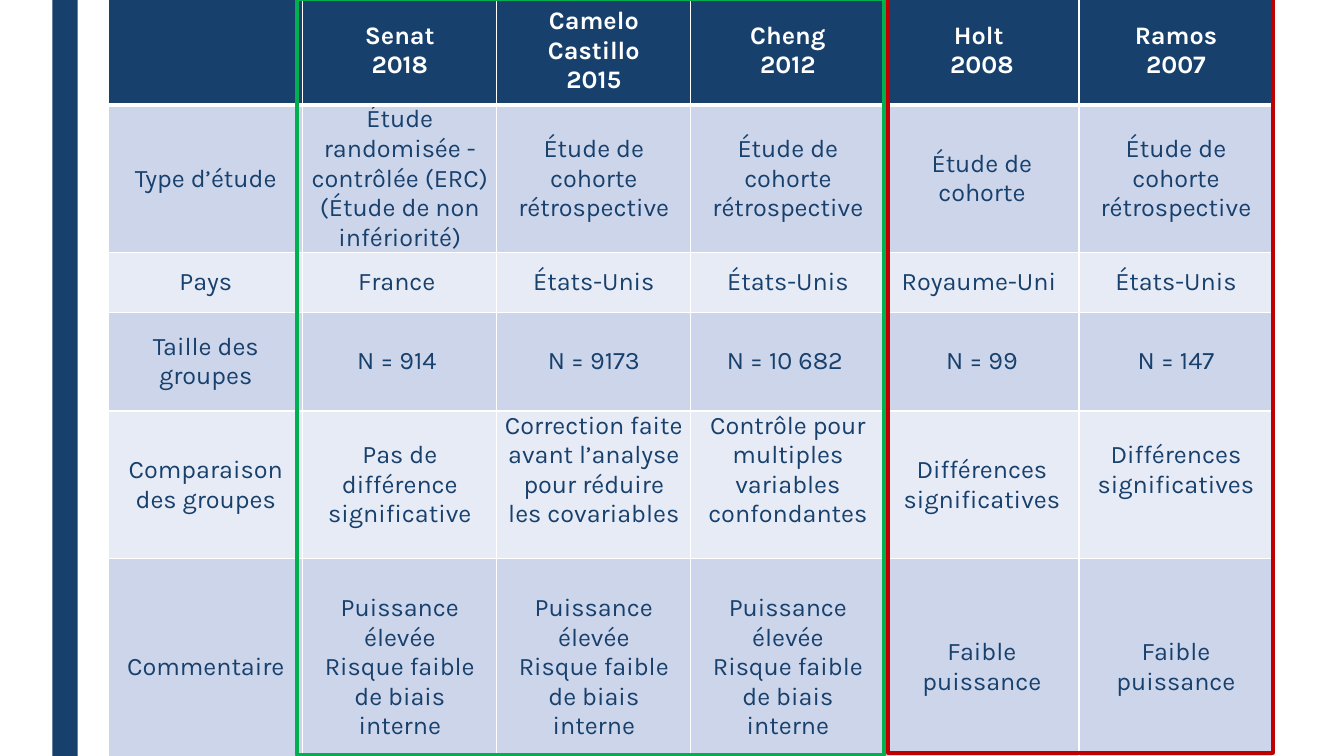
from lxml.etree import SubElement
from pptx import Presentation
from pptx.dml.color import RGBColor
from pptx.enum.shapes import MSO_SHAPE
from pptx.enum.text import MSO_ANCHOR, PP_ALIGN
from pptx.oxml.ns import qn
from pptx.util import Cm, Pt

NAVY = RGBColor(0x17, 0x40, 0x6D)
WHITE = RGBColor(0xFF, 0xFF, 0xFF)
BAND_DARK = RGBColor(0xCC, 0xD5, 0xEA)
BAND_LIGHT = RGBColor(0xE7, 0xEB, 0xF5)
GREEN = RGBColor(0x00, 0xB0, 0x50)
RED = RGBColor(0xC0, 0x00, 0x00)

COLUMN_WIDTH = 4.89
ROW_HEIGHTS = [2.72, 3.71, 1.5, 2.49, 3.71, 5]
COHORT = "Étude de cohorte rétrospective"
HIGH_POWER = "Puissance élevée\nRisque faible de biais interne"
LOW_POWER = "Faible puissance"
DIFFERENCES = "Différences significatives"
STUDIES = [
    ["", "Senat\n2018", "Camelo Castillo\n2015", "Cheng\n2012", "Holt \n2008", "Ramos\n2007"],
    ["Type d’étude",
     "Étude randomisée - contrôlée (ERC)\n(Étude de non infériorité)",
     COHORT, COHORT, "Étude de cohorte", COHORT],
    ["Pays", "France ", "États-Unis", "États-Unis", "Royaume-Uni ", "États-Unis"],
    ["Taille des groupes", "N = 914 ", "N = 9173", "N = 10 682 ", "N = 99", "N = 147"],
    ["Comparaison des groupes", "Pas de différence significative",
     "Correction faite avant l’analyse pour réduire les covariables",
     "Contrôle pour multiples variables confondantes", DIFFERENCES, DIFFERENCES],
    ["Commentaire", HIGH_POWER, HIGH_POWER, HIGH_POWER, LOW_POWER, LOW_POWER],
]
COMPARISON_ROW, COMMENT_ROW = 4, 5
RAISED_COLUMNS = (2, 3, 5)


def write_text(text_frame, text, size=18, color=NAVY, bold=False, font="Karla"):
    """Write each line of text as one centred paragraph."""
    text_frame.text = text
    for paragraph in text_frame.paragraphs:
        paragraph.alignment = PP_ALIGN.CENTER
        paragraph.font.name = font
        paragraph.font.size = Pt(size)
        paragraph.font.bold = bold
        paragraph.font.color.rgb = color
        for run in paragraph.runs:
            run.font.name = font
            run.font.size = Pt(size)
            run.font.bold = bold
            run.font.color.rgb = color


def set_margins(cell, side=0.18, top=0, bottom=0):
    cell.margin_left = cell.margin_right = Cm(side)
    cell.margin_top = Cm(top)
    cell.margin_bottom = Cm(bottom)


def add_cell_borders(cell, top=1, bottom=1):
    """Add white borders; must run before the fill, which follows them in the XML."""
    properties = cell._tc.get_or_add_tcPr()
    for side, width in (("L", 1), ("R", 1), ("T", top), ("B", bottom)):
        line = SubElement(properties, qn(f"a:ln{side}"), w=str(Pt(width)))
        fill = SubElement(line, qn("a:solidFill"))
        SubElement(fill, qn("a:srgbClr"), val=str(WHITE))


def add_rectangle(slide, left, top, width, height, fill=None, line=None):
    shape = slide.shapes.add_shape(
        MSO_SHAPE.RECTANGLE, Cm(left), Cm(top), Cm(width), Cm(height))
    shape.shadow.inherit = False
    if fill is None:
        shape.fill.background()
    else:
        shape.fill.solid()
        shape.fill.fore_color.rgb = fill
    if line is None:
        shape.line.fill.background()
    else:
        shape.line.color.rgb = line
        shape.line.width = Pt(2.75)


def format_cell(cell, text, row, column):
    header = row == 0
    cell.vertical_anchor = MSO_ANCHOR.MIDDLE
    if row == COMMENT_ROW:
        set_margins(cell, side=0.25, top=0.6, bottom=0.13)
    elif row == COMPARISON_ROW and column in RAISED_COLUMNS:
        set_margins(cell, bottom=0.74)
    else:
        set_margins(cell)
    add_cell_borders(cell, top=3 if row == 1 else 1, bottom=3 if header else 1)
    cell.fill.solid()
    cell.fill.fore_color.rgb = NAVY if header else BAND_DARK if row % 2 else BAND_LIGHT
    write_text(cell.text_frame, text, color=WHITE if header else NAVY, bold=header)


def add_study_table(slide, left, top):
    column_count = len(STUDIES[0])
    table = slide.shapes.add_table(
        len(STUDIES), column_count, Cm(left), Cm(top),
        Cm(COLUMN_WIDTH * column_count), Cm(sum(ROW_HEIGHTS))).table
    for column in table.columns:
        column.width = Cm(COLUMN_WIDTH)
    for row, texts in enumerate(STUDIES):
        table.rows[row].height = Cm(ROW_HEIGHTS[row])
        for column, text in enumerate(texts):
            format_cell(table.cell(row, column), text, row, column)


def main():
    presentation = Presentation()
    presentation.slide_width = Cm(33.87)
    presentation.slide_height = Cm(19.05)
    slide = presentation.slides.add_slide(presentation.slide_layouts[6])
    add_rectangle(slide, 1.32, 0, 0.64, 19.05, fill=NAVY)
    add_study_table(slide, 2.74, -0.08)
    add_rectangle(slide, 7.49, -0.03, 14.78, 19.05, line=GREEN)
    add_rectangle(slide, 22.38, -0.08, 9.7, 19.05, line=RED)
    presentation.save("out.pptx")


if __name__ == "__main__":
    main()
